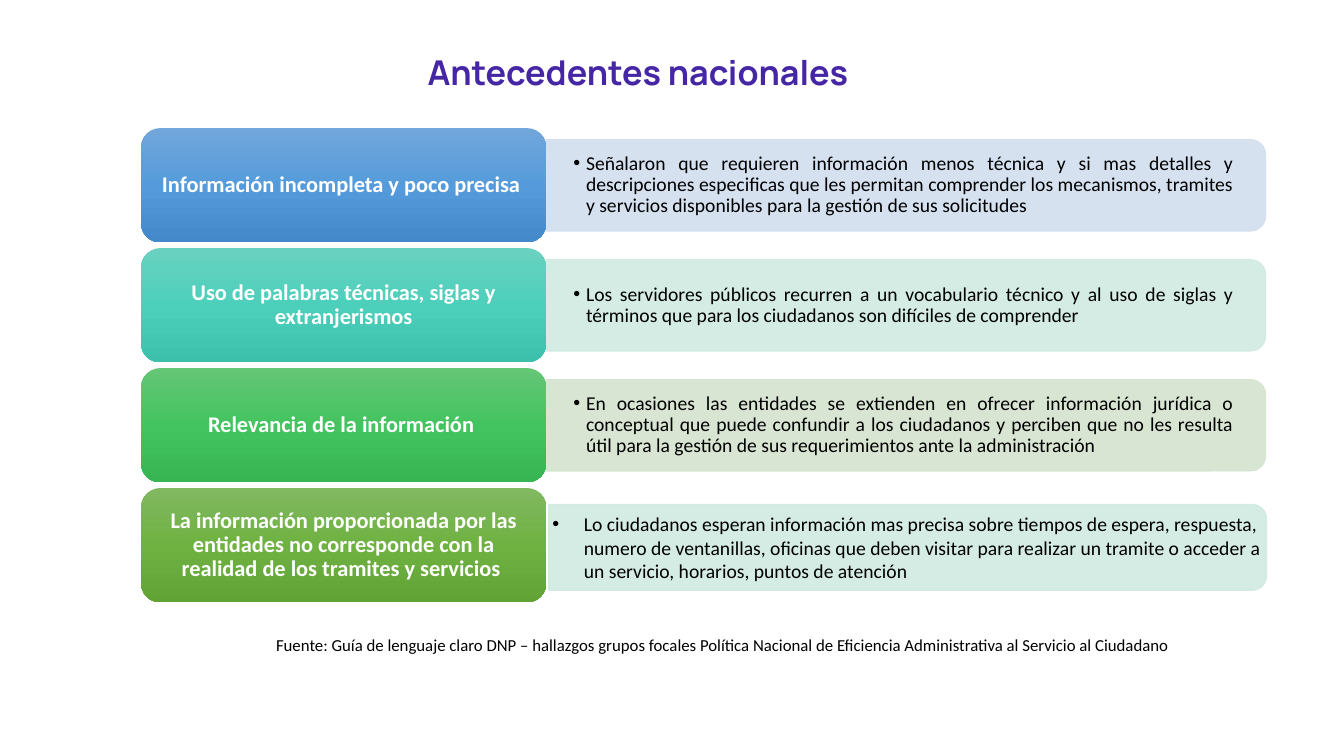
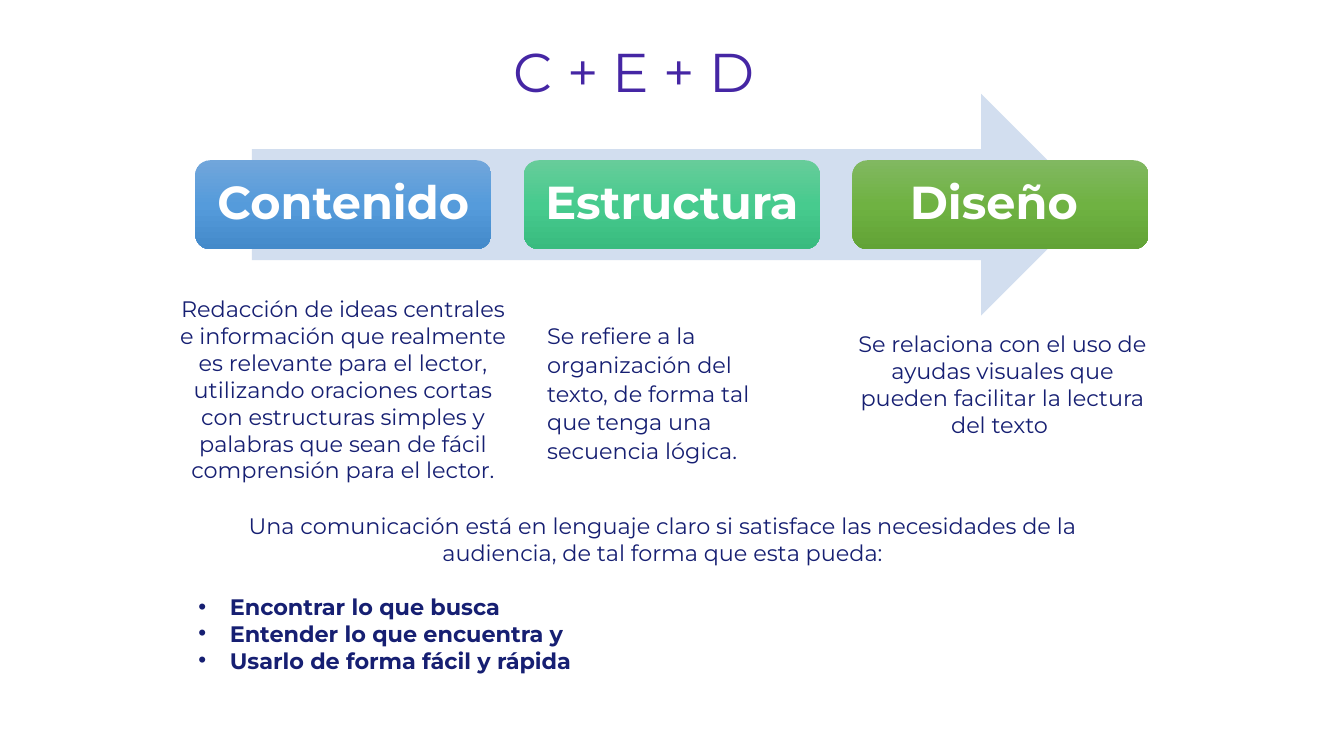
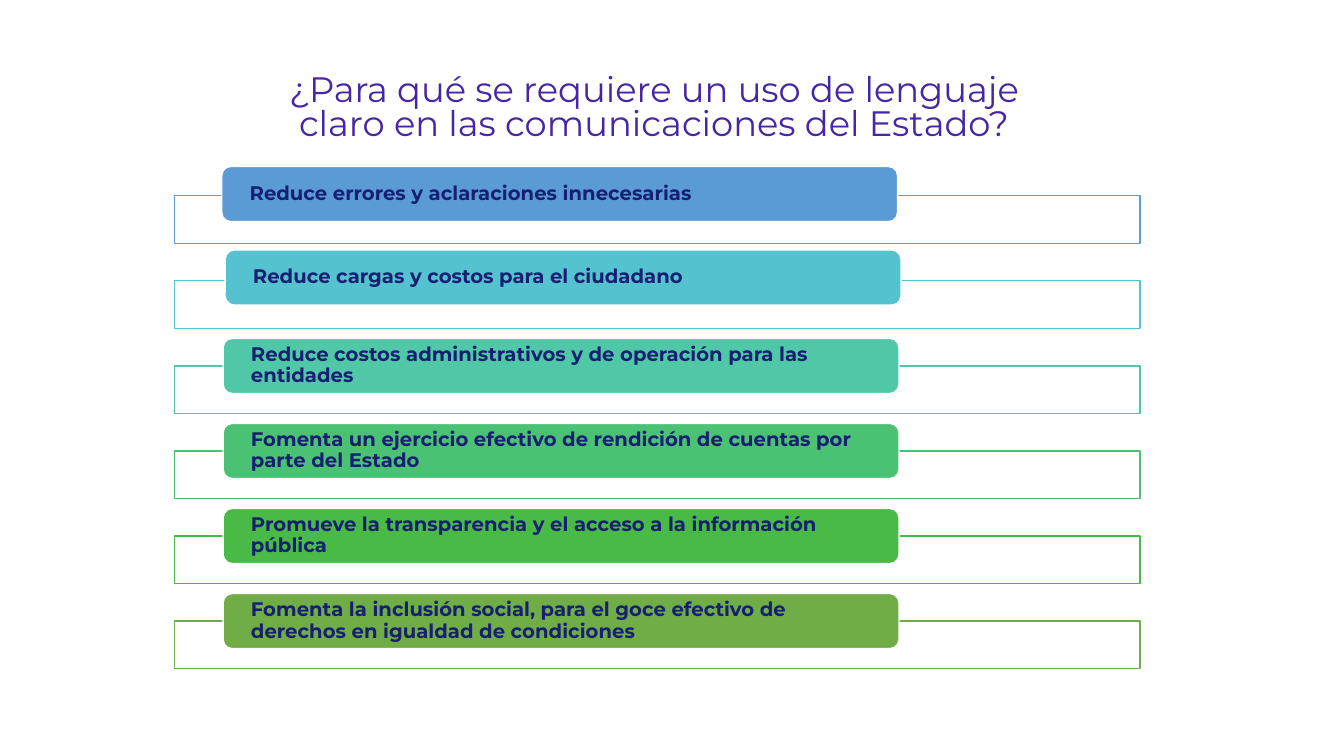
from copy import deepcopy
from lxml.etree import SubElement
from pptx import Presentation
from pptx.dml.color import RGBColor
from pptx.enum.shapes import MSO_SHAPE as SHAPE
from pptx.enum.text import MSO_ANCHOR as ANCHOR, PP_ALIGN as ALIGN
from pptx.oxml.ns import qn
from pptx.util import Pt

COLORS = {
    "title": "4526A4", "navy": "161F72", "black": "000000", "white": "FFFFFF",
    "pale_blue": "D2DEEF", "pale_mint": "D0EAE1", "pale_olive": "D5E3CF",
    "blue": "5B9BD5", "cyan": "55C3CF", "teal": "50C8A7",
    "emerald": "4BC174", "green": "4ABA46", "olive": "70AD47",
}
GRADIENTS = {
    "blue": ("71A6DB", "559BDB", "448ACA"),
    "teal": ("6AD1C0", "4CD0BC", "3CC0AC"),
    "mint": ("67CC9A", "47CB8E", "39BB7F"),
    "green": ("64C677", "44C460", "36B552"),
    "olive": ("81B861", "6FB242", "62A336"),
}


def add_block(slide, kind, left, top, width, height, fill, line=None, line_width=1):
    """Add a preset shape; fill is a colour name or a tuple of gradient colours."""
    block = slide.shapes.add_shape(kind, Pt(left), Pt(top), Pt(width), Pt(height))
    block.shadow.inherit = False
    if isinstance(fill, tuple):
        block.fill.gradient()
        block.fill.gradient_angle = 270
        stops = block._element.spPr.find(".//" + qn("a:gsLst"))
        stops.append(deepcopy(stops[0]))
        for stop, position, color in zip(block.fill.gradient_stops, (0, 0.5, 1), fill):
            stop.position = position
            stop.color.rgb = RGBColor.from_string(color)
    else:
        block.fill.solid()
        block.fill.fore_color.rgb = RGBColor.from_string(COLORS[fill])
    if line:
        block.line.color.rgb = RGBColor.from_string(COLORS[line])
        block.line.width = Pt(line_width)
    else:
        block.line.fill.background()
    return block


def write(block, lines, font, size, color, bold=False, align=ALIGN.CENTER,
          anchor=ANCHOR.TOP, spacing=1.0, insets=(7.2, 3.6), bullet=None, first_bullet=0):
    """Fill a shape with text; bullet is (left margin, hanging depth)."""
    frame = block.text_frame
    frame.text = "\n".join(lines)
    frame.word_wrap = True
    frame.vertical_anchor = anchor
    frame.margin_left = frame.margin_right = Pt(insets[0])
    frame.margin_top = frame.margin_bottom = Pt(insets[1])
    for index, paragraph in enumerate(frame.paragraphs):
        paragraph.alignment = align
        paragraph.line_spacing = spacing
        if bullet and index >= first_bullet:
            props = paragraph._p.get_or_add_pPr()
            props.set("marL", str(Pt(bullet[0])))
            props.set("indent", str(-Pt(bullet[1])))
            SubElement(props, qn("a:buFont"), typeface="Arial")
            SubElement(props, qn("a:buChar"), char="•")
        for run in paragraph.runs:
            run.font.name, run.font.size, run.font.bold = font, Pt(size), bold
            run.font.color.rgb = RGBColor.from_string(COLORS[color])


deck = Presentation()
deck.slide_width, deck.slide_height = Pt(960), Pt(540)

# Slides and their titles
titles = [
    ("Antecedentes nacionales", "Manrope", 24.4, True, 0.9, 134.6, 13, 642),
    ("C + E + D", "Montserrat", 39, False, 0.9, 170.6, 20.9, 564.5),
    ("¿Para qué se requiere un uso de lenguaje claro en las comunicaciones del Estado?",
     "Montserrat", 25.2, False, 0.8, 185, 49, 564.5),
]
slides = []
for text, font, size, bold, spacing, left, top, width in titles:
    slide = deck.slides.add_slide(deck.slide_layouts[6])
    title = slide.shapes.add_textbox(Pt(left), Pt(top), Pt(width), Pt(56.9))
    write(title, [text], font, size, "title", bold, anchor=ANCHOR.BOTTOM, spacing=spacing)
    slides.append(slide)
background, formula, benefits = slides

# Slide 1: findings, each a heading with its detail bar
findings = [
    ("Información incompleta y poco precisa ", "blue", "pale_blue",
     "Señalaron que requieren información menos técnica y si mas detalles y descripciones "
     "especificas que les permitan comprender los mecanismos, tramites y servicios "
     "disponibles para la gestión de sus solicitudes"),
    ("Uso de palabras técnicas, siglas y extranjerismos", "teal", "pale_mint",
     "Los servidores públicos recurren a un vocabulario técnico y al uso de siglas y "
     "términos que para los ciudadanos son difíciles de comprender"),
    ("Relevancia de la información ", "green", "pale_olive",
     "En ocasiones las entidades se extienden en ofrecer información jurídica o conceptual "
     "que puede confundir a los ciudadanos y perciben que no les resulta útil para la "
     "gestión de sus requerimientos ante la administración "),
    ("La información proporcionada por las entidades no corresponde con la realidad de los "
     "tramites y servicios ", "olive", "pale_mint",
     "Lo ciudadanos esperan información mas precisa sobre tiempos de espera, respuesta, "
     "numero de ventanillas, oficinas que deben visitar para realizar un tramite o acceder "
     "a un servicio, horarios, puntos de atención"),
]
for row, (heading_text, gradient, bar_color, detail_text) in enumerate(findings):
    top = 91.5 + 85.7 * row
    middle = top + 40.9
    if row < 3:
        bar_left, bar_length, bar_depth, bar_line = 390.2, 514, 65.5, 0.5
        detail_left, detail_width = 390.2, 510.5
        detail_style = dict(align=ALIGN.JUSTIFY, anchor=ANCHOR.MIDDLE, spacing=0.9,
                            insets=(19.4, 10), bullet=(9, 9))
    else:
        middle += 1.5
        bar_left, bar_length, bar_depth, bar_line = 392, 512.6, 61.2, 1
        detail_left, detail_width = 351.4, 560.9
        detail_style = dict(align=ALIGN.LEFT, anchor=ANCHOR.MIDDLE, bullet=(58.5, 22.5))
    bar = add_block(background, SHAPE.ROUND_2_SAME_RECTANGLE,
                    bar_left + (bar_length - bar_depth) / 2, middle - bar_length / 2,
                    bar_depth, bar_length, bar_color, bar_color, bar_line)
    bar.rotation = 90
    for tint in bar._element.spPr.iter(qn("a:srgbClr")):
        SubElement(tint, qn("a:alpha"), val="90000")
    detail = background.shapes.add_textbox(Pt(detail_left), Pt(middle - 29.5),
                                           Pt(detail_width), Pt(59))
    write(detail, [detail_text], "Calibri", 14, "black", **detail_style)
    heading = add_block(background, SHAPE.ROUNDED_RECTANGLE, 100.8, top, 289.4, 81.6,
                        GRADIENTS[gradient])
    write(heading, [heading_text], "Calibri", 16, "white", True, anchor=ANCHOR.MIDDLE,
          spacing=0.9, insets=(4.8, 2.4))

source = background.shapes.add_textbox(Pt(144), Pt(450), Pt(747.4), Pt(21.8))
write(source, ["Fuente: Guía de lenguaje claro DNP – hallazgos grupos focales Política Nacional "
               "de Eficiencia Administrativa al Servicio al Ciudadano "], "Calibri", 12, "black")

# Slide 2: arrow with three components and their explanations
add_block(formula, SHAPE.RIGHT_ARROW, 180, 67, 600, 158.4, "pale_blue")
components = [
    ("Contenido ", "blue", (116.6, 207.4, 257, 145.4), ALIGN.CENTER, 1.0,
     "Redacción de ideas centrales e información que realmente es relevante para el lector, "
     "utilizando oraciones cortas con estructuras simples y palabras que sean de fácil "
     "comprensión para el lector."),
    ("Estructura", "mint", (383.8, 225.4, 192.2, 112), ALIGN.LEFT, 1.07,
     "Se refiere a la organización del texto, de forma tal que tenga una secuencia lógica."),
    ("Diseño ", "olive", (599.8, 232.6, 232.6, 86), ALIGN.CENTER, 1.0,
     "Se relaciona con el uso de ayudas visuales que pueden facilitar la lectura del texto "),
]
for column, (name, gradient, area, align, spacing, meaning) in enumerate(components):
    component = add_block(formula, SHAPE.ROUNDED_RECTANGLE, 139.5 + 234.7 * column, 114.5,
                          211.5, 63.5, GRADIENTS[gradient])
    write(component, [name], "Montserrat", 33, "white", True, anchor=ANCHOR.MIDDLE,
          spacing=0.9, insets=(10, 10))
    explanation = formula.shapes.add_textbox(*map(Pt, area))
    write(explanation, [meaning], "Montserrat", 16, "navy", align=align, spacing=spacing)

# Slide 2: what the audience should be able to do
goals = formula.shapes.add_textbox(Pt(134.6), Pt(362.2), Pt(677.5), Pt(124))
write(goals, ["Una comunicación está en lenguaje claro si satisface las necesidades de la "
              "audiencia, de tal forma que esta pueda:",
              "Encontrar lo que busca", "Entender lo que encuentra y ",
              "Usarlo de forma fácil y rápida "],
      "Montserrat", 16, "navy", bullet=(22.5, 22.5), first_bullet=1)
goal_lines = goals.text_frame.paragraphs[1:]
goal_lines[0].space_before = Pt(19.5)
for goal in goal_lines:
    goal.alignment = ALIGN.JUSTIFY
    goal.runs[0].font.bold = True

# Slide 3: benefits, each a label over an outlined frame
reasons = [
    ("Reduce errores y aclaraciones innecesarias", "blue", 158.4, 20.9),
    ("Reduce cargas y costos para el ciudadano", "cyan", 160.8, 22),
    ("Reduce costos administrativos y de operación para las entidades", "teal", 159.4, 19.6),
    ("Fomenta un ejercicio efectivo de rendición de cuentas por parte del Estado",
     "emerald", 159.4, 19.6),
    ("Promueve la transparencia y el acceso a la información pública", "green", 159.4, 19.6),
    ("Fomenta la inclusión social, para el goce efectivo de derechos en igualdad de "
     "condiciones", "olive", 159.4, 19.6),
]
for row, (reason, color, label_left, lift) in enumerate(reasons):
    top = 139.8 + 60.75 * row
    add_block(benefits, SHAPE.RECTANGLE, 124.6, top, 689.8, 34, "white", color)
    label = add_block(benefits, SHAPE.ROUNDED_RECTANGLE, label_left, top - lift, 482.8, 39.4,
                      color, "white")
    write(label, [reason], "Montserrat", 14, "navy", True, ALIGN.LEFT, ANCHOR.MIDDLE,
          spacing=0.9, insets=(18, 0))

deck.save("out.pptx")
